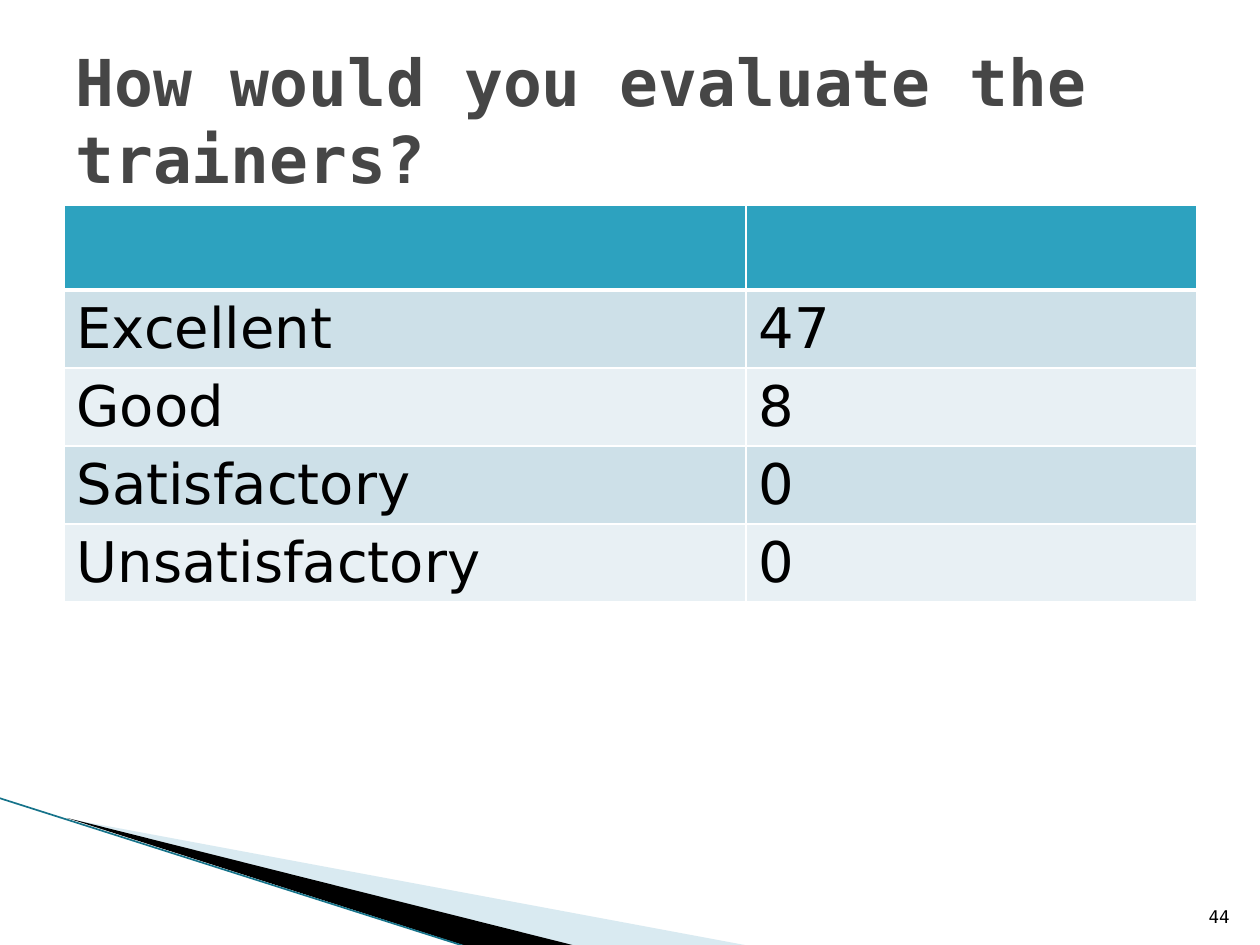
import pptx
import pptx.util
import pptx.dml.color
import pptx.enum.shapes
import pptx.enum.text
import pptx.oxml.ns
import lxml.etree

PX = 914400 // 126
SANS, MONO = "DejaVu Sans", "DejaVu Sans Mono"
ALIGN = pptx.enum.text.PP_ALIGN
ANCHOR = pptx.enum.text.MSO_ANCHOR
qn = pptx.oxml.ns.qn


def colour(hex_code):
    return pptx.dml.color.RGBColor.from_string(hex_code)


def write(frame, text, size, name, hex_code, bold=False, align=ALIGN.LEFT):
    para = frame.paragraphs[0]
    para.alignment = align
    span = para.add_run()
    span.text = text
    style = {"size": pptx.util.Pt(size), "name": name, "bold": bold}
    for key, value in style.items():
        setattr(span.font, key, value)
    span.font.color.rgb = colour(hex_code)


deck = pptx.Presentation()
deck.slide_width = 1260 * PX
deck.slide_height = 945 * PX
page = deck.slides.add_slide(deck.slide_layouts[6])

# Corner decoration: two wedges and a thin line
wedges = [
    ([(69, 819), (750, 946), (575, 946)], "A0CBDC", 40),
    ([(67, 818), (576, 946), (469, 947)], "000000", 100),
]
for points, fill, opacity in wedges:
    builder = page.shapes.build_freeform(*points[0], scale=PX)
    builder.add_line_segments(points[1:], close=True)
    wedge = builder.convert_to_shape()
    wedge.shadow.inherit = False
    wedge.line.fill.background()
    wedge.fill.solid()
    wedge.fill.fore_color.rgb = colour(fill)
    if opacity < 100:
        solid = wedge.fill._xPr.find(qn("a:solidFill"))
        lxml.etree.SubElement(solid[0], qn("a:alpha"), val=str(opacity * 1000))

edge = page.shapes.add_connector(
    pptx.enum.shapes.MSO_CONNECTOR.STRAIGHT, -1 * PX, 798 * PX, 467 * PX, 947 * PX)
edge.line.color.rgb = colour("16738A")
edge.line.width = pptx.util.Pt(0.95)
lxml.etree.SubElement(edge._element.spPr, qn("a:effectLst"))

# Ratings table
rows = [("", ""), ("Excellent", "47"), ("Good", "8"),
        ("Satisfactory", "0"), ("Unsatisfactory", "0")]
widths = [682, 451]
heights = [85] + [78] * 4
table = page.shapes.add_table(
    len(rows), len(widths), 64 * PX, 205 * PX,
    sum(widths) * PX, sum(heights) * PX).table
for column, width in zip(table.columns, widths):
    column.width = width * PX
for index, (row, height, texts) in enumerate(zip(table.rows, heights, rows)):
    row.height = height * PX
    fill = "2DA2BF" if index == 0 else ("E8F0F4", "CDE0E8")[index % 2]
    for cell, text in zip(row.cells, texts):
        borders = {"lnL": 1, "lnR": 1, "lnT": 3 if index == 1 else 1,
                   "lnB": 3 if index == 0 else 1}
        for side, points in borders.items():
            border = lxml.etree.SubElement(
                cell._tc.get_or_add_tcPr(), qn("a:" + side), w=str(points * 12700))
            solid = lxml.etree.SubElement(border, qn("a:solidFill"))
            lxml.etree.SubElement(solid, qn("a:srgbClr"), val="FFFFFF")
        cell.fill.solid()
        cell.fill.fore_color.rgb = colour(fill)
        if text:
            write(cell.text_frame, text, 32, SANS, "000000")

# Title and page number
labels = [
    ((63, 40, 1134, 158), ANCHOR.MIDDLE,
     ("How would you evaluate the trainers?", 36.9, MONO, "464646", True)),
    ((1192, 883, 50, 50), ANCHOR.BOTTOM,
     ("44", 10, MONO, "000000", False, ALIGN.RIGHT)),
]
for place, anchor, content in labels:
    box = page.shapes.add_textbox(*[length * PX for length in place])
    box.text_frame.word_wrap = True
    box.text_frame.vertical_anchor = anchor
    write(box.text_frame, *content)

deck.save("out.pptx")
